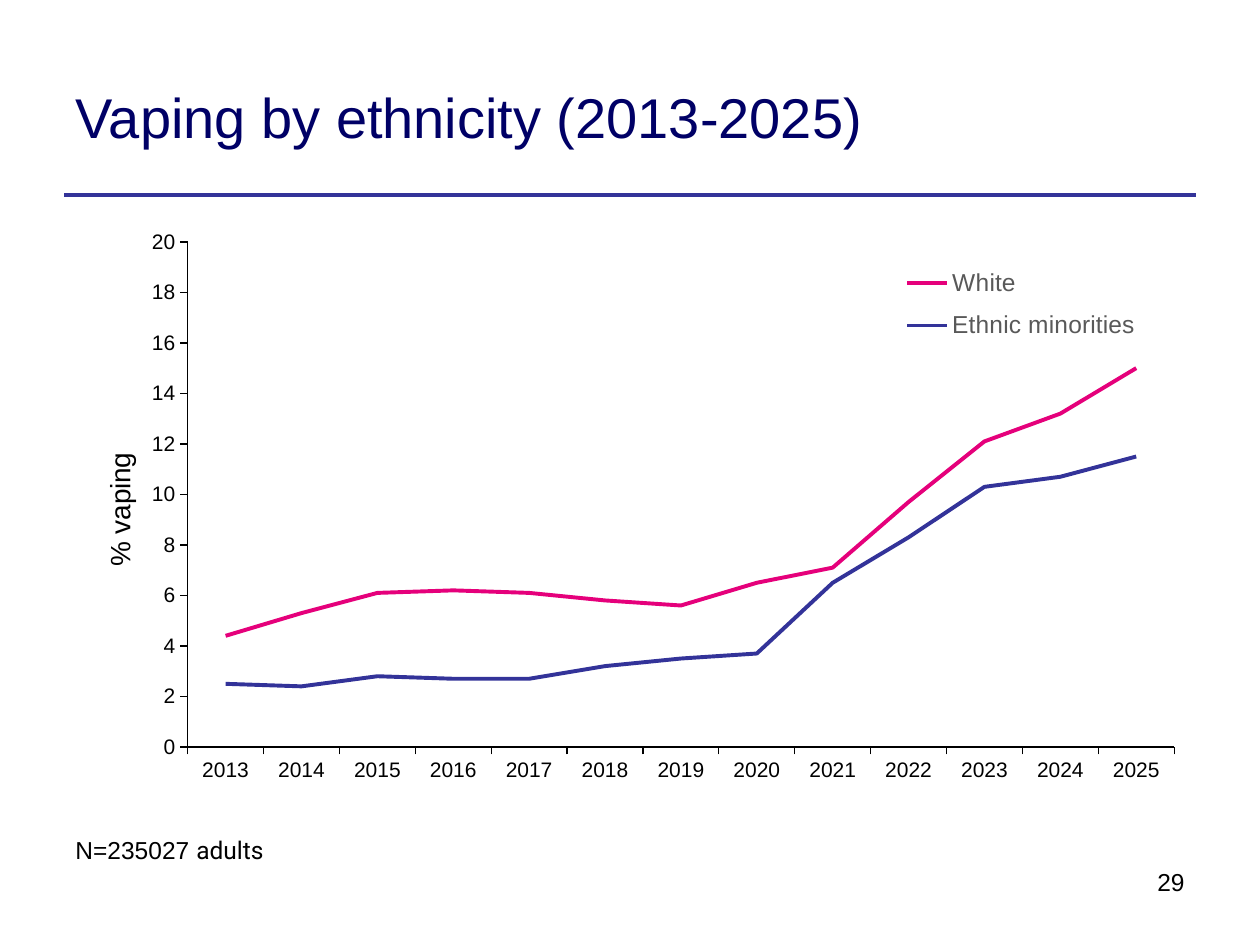
import pptx
import pptx.chart.data
import pptx.dml.color
import pptx.enum.chart
import pptx.enum.shapes
import pptx.enum.text
import pptx.oxml
import pptx.oxml.ns
import pptx.util

Pt = pptx.util.Pt
NAVY, INDIGO, PINK = "000066", "333399", "E5007B"
BLACK, GREY = "000000", "595959"


def color(value):
    return pptx.dml.color.RGBColor.from_string(value)


class SlideBuilder:
    font_name = "Arial"

    def __init__(self, presentation):
        self.slide = presentation.slides.add_slide(presentation.slide_layouts[5])

    def style_font(self, font, size, value, name=None):
        font.size = Pt(size)
        font.name = name or self.font_name
        font.bold = False
        font.color.rgb = color(value)

    def style_line(self, line, value, width):
        line.color.rgb = color(value)
        line.width = Pt(width)

    def add_title(self, text, left, top, width, height):
        title = self.slide.shapes.title
        title.left, title.top, title.width, title.height = map(Pt, (left, top, width, height))
        frame = title.text_frame
        frame.text = text
        frame.auto_size = pptx.enum.text.MSO_AUTO_SIZE.NONE
        frame.vertical_anchor = pptx.enum.text.MSO_ANCHOR.MIDDLE
        paragraph = frame.paragraphs[0]
        paragraph.alignment = pptx.enum.text.PP_ALIGN.LEFT
        self.style_font(paragraph.font, 32, NAVY)

    def add_rule(self, left, right, y):
        connector = self.slide.shapes.add_connector(
            pptx.enum.shapes.MSO_CONNECTOR.STRAIGHT, Pt(left), Pt(y), Pt(right), Pt(y))
        self.style_line(connector.line, INDIGO, 2.25)
        connector._element.spPr.append(pptx.oxml.parse_xml(
            f'<a:effectLst {pptx.oxml.ns.nsdecls("a")}/>'))

    def add_text(self, runs, left, top, width, height, alignment="LEFT"):
        frame = self.slide.shapes.add_textbox(*map(Pt, (left, top, width, height))).text_frame
        frame.word_wrap = True
        paragraph = frame.paragraphs[0]
        paragraph.alignment = pptx.enum.text.PP_ALIGN[alignment]
        for text, font_name in runs:
            run = paragraph.add_run()
            run.text = text
            self.style_font(run.font, 14, BLACK, font_name)

    def place(self, element, previous, x, y, width=None, height=None, inner=False):
        for old in element.findall(pptx.oxml.ns.qn("c:layout")):
            element.remove(old)
        target = '<c:layoutTarget val="inner"/>' if inner else ""
        size = f'<c:w val="{width}"/><c:h val="{height}"/>' if width else ""
        layout = pptx.oxml.parse_xml(
            f'<c:layout {pptx.oxml.ns.nsdecls("c")}><c:manualLayout>{target}'
            f'<c:xMode val="edge"/><c:yMode val="edge"/><c:x val="{x}"/><c:y val="{y}"/>'
            f'{size}</c:manualLayout></c:layout>')
        if previous:
            element.find(pptx.oxml.ns.qn(previous)).addnext(layout)
        else:
            element.insert(0, layout)

    def style_axis(self, axis):
        axis.has_major_gridlines = False
        axis.major_tick_mark = pptx.enum.chart.XL_TICK_MARK.OUTSIDE
        axis.minor_tick_mark = pptx.enum.chart.XL_TICK_MARK.NONE
        self.style_font(axis.tick_labels.font, 12, BLACK)
        self.style_line(axis.format.line, BLACK, 0.75)

    def add_line_chart(self, categories, series, axis_title, left, top, width, height):
        data = pptx.chart.data.CategoryChartData()
        data.categories = categories
        for name, values, _ in series:
            data.add_series(name, values)
        chart = self.slide.shapes.add_chart(
            pptx.enum.chart.XL_CHART_TYPE.LINE, *map(Pt, (left, top, width, height)), data).chart
        chart.has_title = False
        self.style_font(chart.font, 10, BLACK)
        plot = chart.plots[0]
        plot.vary_by_categories = False
        for line, (_, _, value) in zip(plot.series, series):
            line.smooth = False
            line.marker.style = pptx.enum.chart.XL_MARKER_STYLE.NONE
            self.style_line(line.format.line, value, 2.25)

        self.style_axis(chart.category_axis)
        axis = chart.value_axis
        self.style_axis(axis)
        axis.minimum_scale, axis.maximum_scale, axis.major_unit = 0, 20, 2
        axis.tick_labels.number_format = "0"
        axis.tick_labels.number_format_is_linked = False
        title = axis.axis_title
        title.text_frame.text = axis_title
        self.style_font(title.text_frame.paragraphs[0].font, 16, BLACK)
        self.place(title._element, "c:tx", 0.03, 0.37)

        chart.has_legend = True
        legend = chart.legend
        legend.position = pptx.enum.chart.XL_LEGEND_POSITION.BOTTOM
        legend.include_in_layout = False
        self.style_font(legend.font, 14, GREY)
        self.place(legend._element, "c:legendPos", 0.73, 0.06, 0.23, 0.16)

        plot_area = plot._element.getparent()
        self.place(plot_area, None, 0.11, 0.04, 0.87, 0.81, inner=True)


def main():
    presentation = pptx.Presentation()
    presentation.slide_width, presentation.slide_height = Pt(720), Pt(540)
    builder = SlideBuilder(presentation)
    builder.add_rule(36.7, 683.3, 111.4)
    builder.add_title("Vaping by ethnicity (2013-2025)", 36, 21.6, 568, 90)
    years = [str(year) for year in range(2013, 2026)]
    series = [
        ("White", [4.4, 5.3, 6.1, 6.2, 6.1, 5.8, 5.6, 6.5, 7.1, 9.7, 12.1, 13.2, 15], PINK),
        ("Ethnic minorities",
         [2.5, 2.4, 2.8, 2.7, 2.7, 3.2, 3.5, 3.7, 6.5, 8.3, 10.3, 10.7, 11.5], INDIGO),
    ]
    builder.add_line_chart(years, series, "% vaping", 36, 124, 648, 356.4)
    builder.add_text([("29", "Arial")], 484.6, 491.8, 199.4, 37.4, "RIGHT")
    builder.add_text([("N=235027 ", "Arial"), ("adults", "Roboto")], 36, 473.8, 612.7, 24.5)
    presentation.save("out.pptx")


if __name__ == "__main__":
    main()
